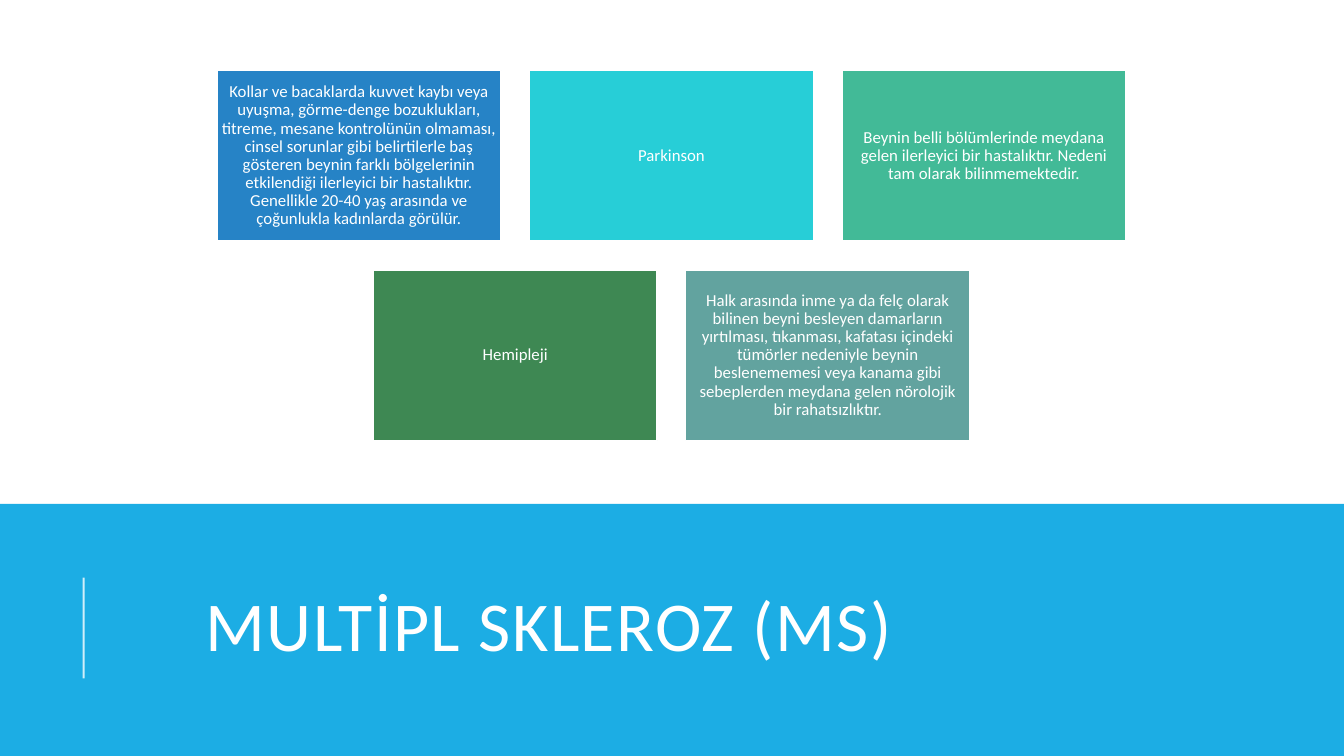
from dataclasses import dataclass

from lxml import etree
from pptx import Presentation
from pptx.dml.color import RGBColor
from pptx.enum.shapes import MSO_CONNECTOR, MSO_SHAPE
from pptx.enum.text import MSO_ANCHOR, PP_ALIGN
from pptx.oxml.ns import qn
from pptx.util import Inches, Pt

RECTANGLE = MSO_SHAPE.RECTANGLE
STRAIGHT = MSO_CONNECTOR.STRAIGHT
MIDDLE = MSO_ANCHOR.MIDDLE
CENTER = PP_ALIGN.CENTER
LEFT = PP_ALIGN.LEFT

FONT = "Calibri"
WHITE = "FFFFFF"
BAND_BLUE = "1CADE4"
SLIDE_WIDTH, SLIDE_HEIGHT = 13.33, 7.5
BAND_TOP = 5

CARD_WIDTH, CARD_HEIGHT = 2.82, 1.69
CARD_STEP_X, CARD_STEP_Y = 3.1, 1.98
GRID_CENTER, GRID_TOP = 6.66, 0.7
CARD_INSET = 0.05


@dataclass
class Card:
    text: str
    fill: str


CARD_ROWS = [
    [
        Card("Kollar ve bacaklarda kuvvet kaybı veya uyuşma, görme-denge "
             "bozuklukları, titreme, mesane kontrolünün olmaması, cinsel "
             "sorunlar gibi belirtilerle baş gösteren beynin farklı "
             "bölgelerinin etkilendiği ilerleyici bir hastalıktır. Genellikle "
             "20-40 yaş arasında ve çoğunlukla kadınlarda görülür.", "2683C6"),
        Card("Parkinson", "27CED7"),
        Card("Beynin belli bölümlerinde meydana gelen ilerleyici bir "
             "hastalıktır. Nedeni tam olarak bilinmemektedir.", "42BA97"),
    ],
    [
        Card("Hemipleji", "3E8853"),
        Card("Halk arasında inme ya da felç olarak bilinen beyni besleyen "
             "damarların yırtılması, tıkanması, kafatası içindeki tümörler "
             "nedeniyle beynin beslenememesi veya kanama gibi sebeplerden "
             "meydana gelen nörolojik bir rahatsızlıktır.", "62A39F"),
    ],
]


def color(value: str) -> RGBColor:
    return RGBColor.from_string(value)


def add_rectangle(page, left: float, top: float, width: float, height: float,
                  fill: str):
    box = page.shapes.add_shape(RECTANGLE, Inches(left), Inches(top),
                                Inches(width), Inches(height))
    box.shadow.inherit = False
    box.fill.solid()
    box.fill.fore_color.rgb = color(fill)
    box.line.fill.background()
    return box


def write_text(box, text: str, size: float, align: PP_ALIGN, spacing: float) -> None:
    frame = box.text_frame
    frame.word_wrap = True
    frame.vertical_anchor = MIDDLE
    para = frame.paragraphs[0]
    para.text = text
    para.alignment = align
    para.line_spacing = spacing
    para.font.name = FONT
    para.font.size = Pt(size)
    para.font.color.rgb = color(WHITE)


def add_card(page, card: Card, left: float, top: float) -> None:
    box = add_rectangle(page, left, top, CARD_WIDTH, CARD_HEIGHT, card.fill)
    box.line.color.rgb = color(WHITE)
    box.line.width = Pt(1.25)
    frame = box.text_frame
    frame.margin_left = frame.margin_right = Inches(CARD_INSET)
    frame.margin_top = frame.margin_bottom = Inches(CARD_INSET)
    write_text(box, card.text, 12, CENTER, 0.9)


def add_title(page, text: str) -> None:
    box = page.shapes.add_textbox(Inches(1.12), Inches(5.44),
                                  Inches(10.63), Inches(1.64))
    box.text_frame.margin_left = Inches(0.92)
    write_text(box, text, 50, LEFT, 0.8)
    # Letter spacing of one point
    for properties in box.element.iter(qn("a:defRPr")):
        properties.set("spc", "100")


def add_accent_line(page) -> None:
    line = page.shapes.add_connector(STRAIGHT, Inches(0.83), Inches(6.73),
                                     Inches(0.83), Inches(5.73))
    line.line.color.rgb = color(WHITE)
    line.line.width = Pt(1.5)
    # Slight transparency, no shadow
    for tone in line.element.iter(qn("a:srgbClr")):
        etree.SubElement(tone, qn("a:alpha"), val="80000")
    etree.SubElement(line.element.spPr, qn("a:effectLst"))


def main() -> None:
    deck = Presentation()
    deck.slide_width = Inches(SLIDE_WIDTH)
    deck.slide_height = Inches(SLIDE_HEIGHT)
    page = deck.slides.add_slide(deck.slide_layouts[6])

    # Title band
    add_rectangle(page, 0, BAND_TOP, SLIDE_WIDTH, SLIDE_HEIGHT - BAND_TOP, BAND_BLUE)
    add_title(page, "MULTİPL SKLEROZ (MS)")
    add_accent_line(page)

    # Cards, each row centred
    for row, cards in enumerate(CARD_ROWS):
        row_width = (len(cards) - 1) * CARD_STEP_X + CARD_WIDTH
        row_left = GRID_CENTER - row_width / 2
        for column, card in enumerate(cards):
            add_card(page, card, row_left + column * CARD_STEP_X,
                     GRID_TOP + row * CARD_STEP_Y)

    deck.save("out.pptx")


if __name__ == "__main__":
    main()
